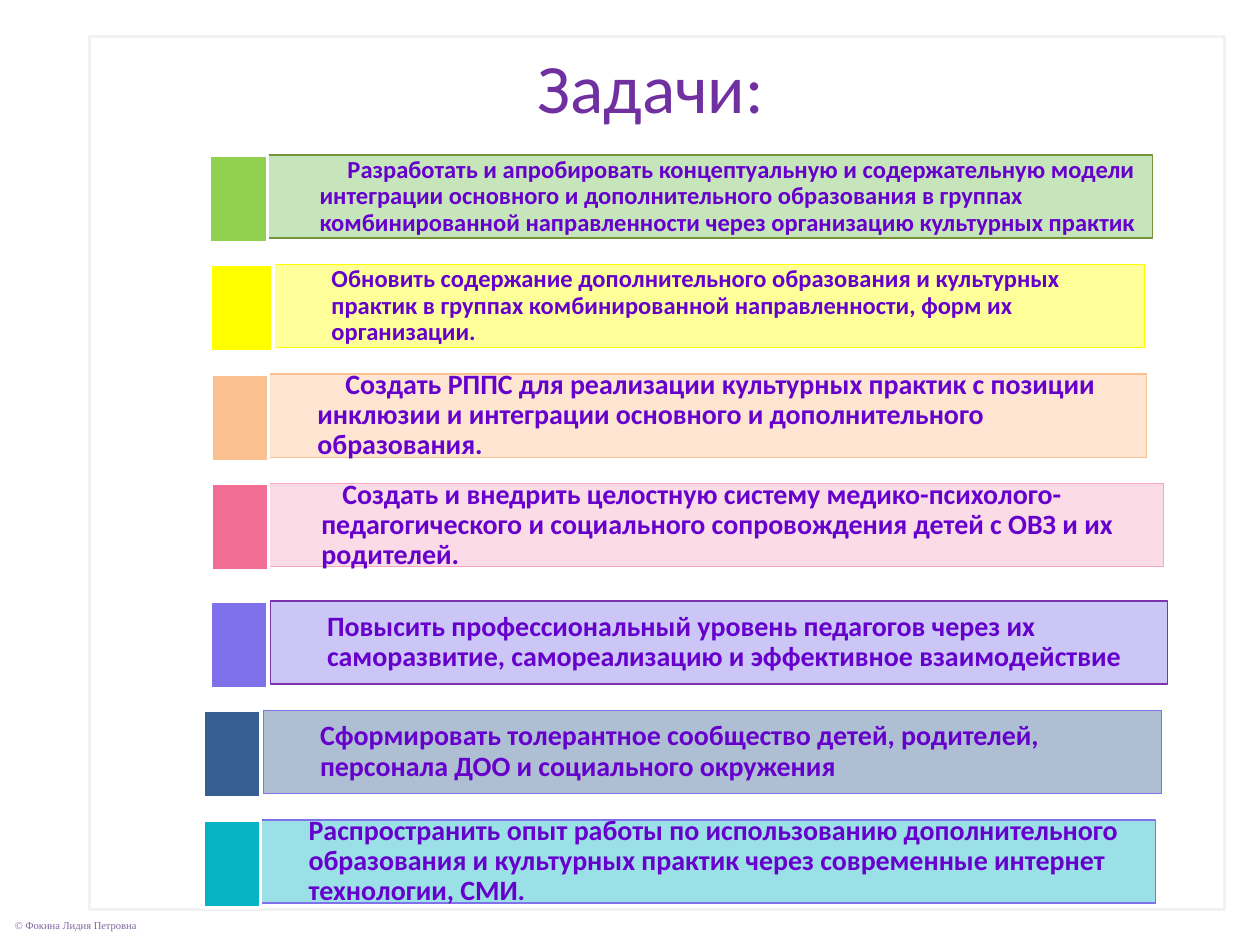
"""Builds the "Задачи" slide: seven colour-coded task bars under a title."""
from collections import namedtuple
from dataclasses import dataclass

from lxml.etree import SubElement
from pptx import Presentation
from pptx.dml.color import RGBColor
from pptx.enum.shapes import MSO_SHAPE as SHAPE
from pptx.enum.text import MSO_ANCHOR as ANCHOR, PP_ALIGN as ALIGN
from pptx.oxml.ns import qn
from pptx.util import Pt


@dataclass(frozen=True)
class Theme:
    white: str = "FFFFFF"
    frame: str = "F2F2F2"
    title: str = "7030A0"
    text: str = "6600CC"
    credit: str = "8064A2"
    font: str = "Calibri"
    credit_font: str = "Times New Roman"
    title_size: float = 39.6
    credit_size: float = 6
    small: float = 14
    large: float = 16


THEME = Theme()
FIRST_TOP, LOWER_TOP, PITCH = 88.6, 343.4, 62.6
UPPER_COUNT = 4
BAR_HEIGHT, SWATCH_WIDTH, SWATCH_HEIGHT = 47.5, 33, 50

Task = namedtuple("Task", "text left width fill line swatch swatch_left size indent")
TASKS = [
    Task("Разработать и апробировать концептуальную и содержательную модели интеграции основного "
         "и дополнительного образования в группах комбинированной направленности через "
         "организацию культурных практик",
         150.2, 508.3, "73BF55", "77933C", "92D050", 119.8, THEME.small, 16),
    Task("Обновить содержание дополнительного образования и культурных практик в группах "
         "комбинированной направленности, форм их организации.",
         157, 497, "FFFF00", "FFFF00", "FFFF00", 120.2, THEME.small, 0),
    Task("Создать РППС для реализации культурных практик с позиции инклюзии и интеграции "
         "основного и дополнительного образования.",
         149, 506, "FAC090", "FAC090", "FAC090", 120.5, THEME.large, 16),
    Task("Создать и внедрить целостную систему медико-психолого-педагогического и социального "
         "сопровождения детей с ОВЗ и их родителей.",
         151.2, 513.5, "F7A7BE", "F7A7BE", "F26E94", 120.5, THEME.large, 12),
    Task("Повысить профессиональный уровень педагогов через их саморазвитие, самореализацию "
         "и эффективное взаимодействие",
         154.5, 512.6, "7F71E9", "7A35AD", "7F71E9", 120.2, THEME.large, 0),
    Task("Сформировать толерантное сообщество детей, родителей, персонала ДОО и социального "
         "окружения",
         150.5, 513.2, "376092", "7F71E9", "376092", 116.1, THEME.large, 0),
    Task("Распространить опыт работы по использованию дополнительного образования и культурных "
         "практик через современные интернет технологии, СМИ.",
         144, 516.3, "05B3C5", "7F71E9", "05B3C5", 115.9, THEME.large, 0),
]


def add_rect(s, box, fill, line, weight, opacity=100):
    """Add a flat rectangle with a fill, an outline and an optional opacity."""
    sp = s.shapes.add_shape(SHAPE.RECTANGLE, *map(Pt, box))
    sp.shadow.inherit = False
    sp.fill.solid()
    sp.fill.fore_color.rgb = RGBColor.from_string(fill)
    if opacity < 100:
        color = sp.element.spPr.find(qn("a:solidFill"))[0]
        SubElement(color, qn("a:alpha"), val=str(opacity * 1000))
    sp.line.color.rgb = RGBColor.from_string(line)
    sp.line.width = Pt(weight)
    return sp


def set_text(sp, text, *, size, color, font=THEME.font, bold=False, align=ALIGN.LEFT,
             anchor=ANCHOR.MIDDLE, insets=(7.2, 3.6, 7.2, 3.6), wrap=True,
             spacing=1.0, indent=0):
    """Write one formatted paragraph into a shape."""
    tf = sp.text_frame
    tf.word_wrap = wrap
    tf.vertical_anchor = anchor
    tf.margin_left, tf.margin_top, tf.margin_right, tf.margin_bottom = map(Pt, insets)
    p = tf.paragraphs[0]
    p.alignment = align
    p.line_spacing = spacing
    if indent:
        p._p.get_or_add_pPr().set("indent", str(Pt(indent)))
    r = p.add_run()
    r.text = text
    r.font.name = font
    r.font.size = Pt(size)
    r.font.bold = bold
    r.font.color.rgb = RGBColor.from_string(color)


def add_title(s, text):
    """Place and format the title placeholder."""
    sp = s.shapes.title
    sp.left, sp.top, sp.width, sp.height = map(Pt, (59.8, 21.6, 624.2, 49.7))
    set_text(sp, text, size=THEME.title_size, color=THEME.title,
             align=ALIGN.CENTER, anchor=ANCHOR.TOP)
    return sp


def add_credit(s, text):
    """Add the small copyright line at the bottom left."""
    sp = s.shapes.add_textbox(*map(Pt, (1.4, 521.3, 86.4, 14.4)))
    set_text(sp, text, size=THEME.credit_size, color=THEME.credit,
             font=THEME.credit_font, wrap=False)


def add_task(s, task, top):
    """Add a translucent task bar with its solid colour swatch."""
    bar = add_rect(s, (task.left, top, task.width, BAR_HEIGHT), task.fill, task.line, 0.75, 40)
    set_text(bar, task.text, size=task.size, color=THEME.text, bold=True,
             insets=(32.4, 5, 5, 5), spacing=0.9, indent=task.indent)
    width = min(task.left - task.swatch_left, 36) if task.left > 156 else SWATCH_WIDTH
    add_rect(s, (task.swatch_left, top, width, SWATCH_HEIGHT), task.swatch, THEME.white, 2)


def main():
    """Build and save the slide."""
    prs = Presentation()
    prs.slide_width, prs.slide_height = Pt(720), Pt(540)
    s = prs.slides.add_slide(prs.slide_layouts[5])
    title = add_title(s, "Задачи:")
    frame = add_rect(s, (51.1, 20.9, 648.7, 499), THEME.white, THEME.frame, 2, 70)
    title.element.addprevious(frame.element)
    add_credit(s, "© Фокина Лидия Петровна")
    for i, task in enumerate(TASKS):
        upper = i < UPPER_COUNT
        top = FIRST_TOP + i * PITCH if upper else LOWER_TOP + (i - UPPER_COUNT) * PITCH
        add_task(s, task, top)
    prs.save("out.pptx")


if __name__ == "__main__":
    main()
